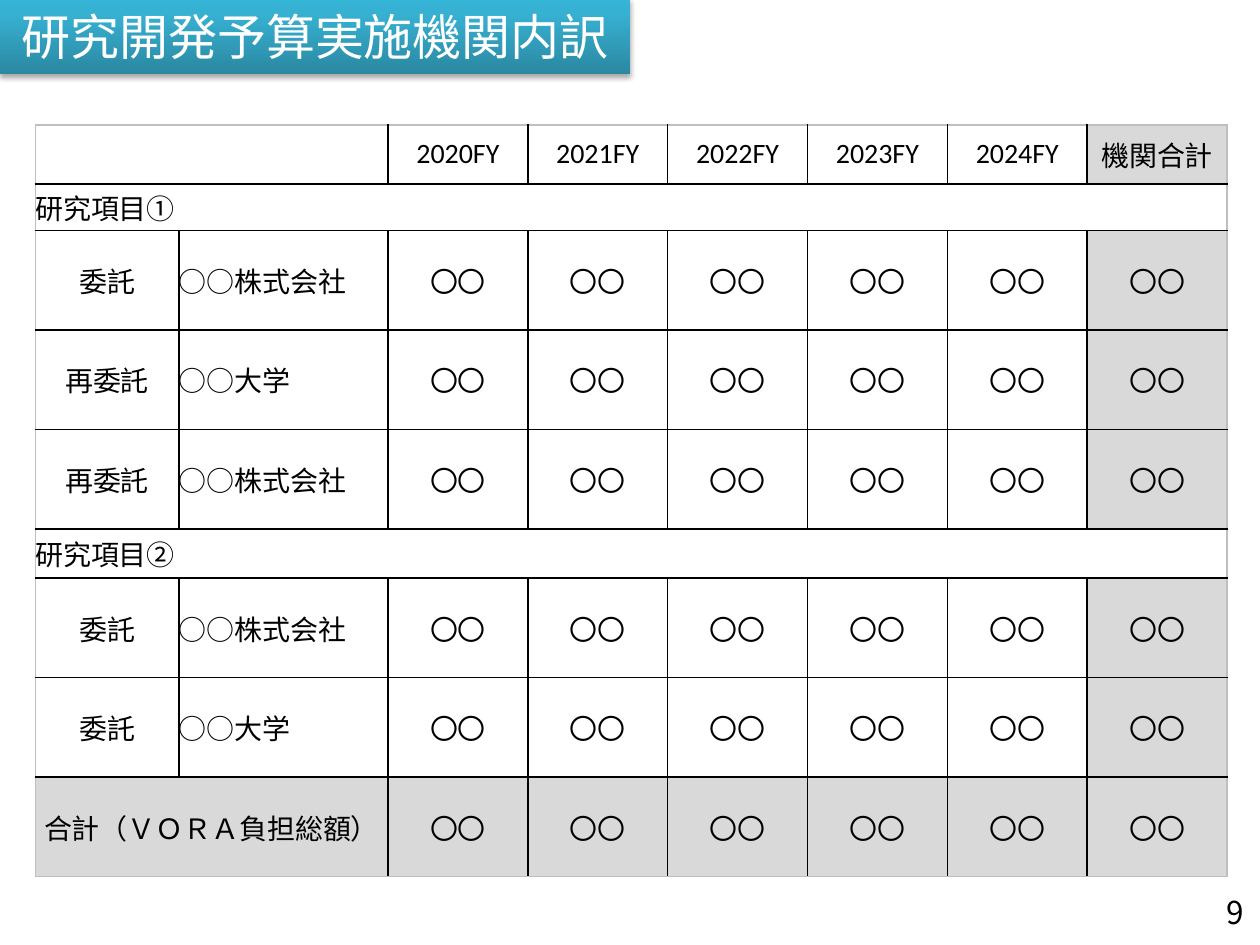
from lxml.etree import SubElement
from pptx import Presentation
from pptx.dml.color import RGBColor
from pptx.enum.text import MSO_ANCHOR, MSO_AUTO_SIZE, PP_ALIGN
from pptx.oxml import parse_xml
from pptx.oxml.ns import nsdecls, qn
from pptx.util import Inches, Pt

BLACK = RGBColor(0x00, 0x00, 0x00)
WHITE = RGBColor(0xFF, 0xFF, 0xFF)
GRAY = RGBColor(0xD9, 0xD9, 0xD9)
EDGE = RGBColor(0xBF, 0xBF, 0xBF)
STOPS = [
    (0, RGBColor(0x2A, 0x88, 0xA2)),
    (80, RGBColor(0x37, 0xB1, 0xD2)),
    (100, RGBColor(0x34, 0xB4, 0xD6)),
]
LATIN, CJK = "Calibri", "Noto Sans CJK JP"

TITLE = "研究開発予算実施機関内訳"
PAGE = "9"
YEARS = [f"{year}FY" for year in range(2020, 2025)]
SUMS = ["〇〇"] * 6
FIRM, SCHOOL = "○○株式会社", "○○大学"
ROWS = [
    ["", None, *YEARS, "機関合計"],
    ["研究項目①"] + [None] * 7,
    ["委託", FIRM, *SUMS],
    ["再委託", SCHOOL, *SUMS],
    ["再委託", FIRM, *SUMS],
    ["研究項目②"] + [None] * 7,
    ["委託", FIRM, *SUMS],
    ["委託", SCHOOL, *SUMS],
    ["合計（ＶＯＲＡ負担総額）", None, *SUMS],
]
WIDTHS = [1.14, 1.66] + [1.11] * 6
HEIGHTS = [0.47, 0.37, 0.79, 0.79, 0.79, 0.39, 0.79, 0.79, 0.79]


def write(frame, text, size=16, font=CJK, color=BLACK, align=PP_ALIGN.CENTER):
    para = frame.paragraphs[0]
    para.alignment = align
    run = para.add_run()
    run.text = text
    run.font.size = Pt(size)
    run.font.name = font
    run.font.color.rgb = color
    SubElement(run.font._element, qn("a:ea"), typeface=CJK)


def place(shape, left, top, width, height):
    shape.left, shape.top = Inches(left), Inches(top)
    shape.width, shape.height = Inches(width), Inches(height)


def add_title(slide):
    title = slide.shapes.title
    place(title, 0, -0.02, 5, 0.61)
    stops = "".join(
        f'<a:gs pos="{pos * 1000}"><a:srgbClr val="{color}"/></a:gs>'
        for pos, color in STOPS
    )
    props = title._element.spPr
    props.append(parse_xml(
        f'<a:gradFill {nsdecls("a")} rotWithShape="1"><a:gsLst>{stops}</a:gsLst>'
        '<a:lin ang="16200000" scaled="0"/></a:gradFill>'
    ))
    props.append(parse_xml(
        f'<a:effectLst {nsdecls("a")}><a:outerShdw blurRad="{Pt(3.1)}" '
        f'dist="{Pt(1.8)}" dir="5400000" rotWithShape="0"><a:srgbClr val="{BLACK}">'
        '<a:alpha val="35000"/></a:srgbClr></a:outerShdw></a:effectLst>'
    ))
    frame = title.text_frame
    frame.auto_size = MSO_AUTO_SIZE.NONE
    frame.vertical_anchor = MSO_ANCHOR.MIDDLE
    write(frame, TITLE, size=28, font=LATIN, color=WHITE)


def add_page(slide):
    box = slide.shapes.add_textbox(
        Inches(9.29), Inches(7.11), Inches(0.58), Inches(0.25))
    frame = box.text_frame
    frame.margin_left = frame.margin_right = 0
    frame.margin_top = frame.margin_bottom = 0
    frame.word_wrap = False
    frame.vertical_anchor = MSO_ANCHOR.MIDDLE
    write(frame, PAGE, size=18, align=PP_ALIGN.RIGHT)


def set_lines(cell, lines):
    props = cell._tc.get_or_add_tcPr()
    for spot, (side, color) in enumerate(lines):
        props.insert(spot, parse_xml(
            f'<a:ln{side} {nsdecls("a")} w="{Pt(1)}"><a:solidFill>'
            f'<a:srgbClr val="{color}"/></a:solidFill></a:ln{side}>'
        ))


def add_budget(slide):
    count, last = len(ROWS), len(WIDTHS) - 1
    table = slide.shapes.add_table(
        count, len(WIDTHS), Inches(0.28), Inches(0.99),
        Inches(sum(WIDTHS)), Inches(sum(HEIGHTS))).table
    table.first_row = table.horz_banding = False
    for column, width in zip(table.columns, WIDTHS):
        column.width = Inches(width)
    for line, height in zip(table.rows, HEIGHTS):
        line.height = Inches(height)
    for row, texts in enumerate(ROWS):
        end = texts.count(None)
        if end:
            table.cell(row, 0).merge(table.cell(row, end))
        whole = end == last
        for col, text in enumerate(texts):
            cell = table.cell(row, col)
            cell.margin_left = cell.margin_right = 0
            cell.margin_top = cell.margin_bottom = 0
            cell.vertical_anchor = MSO_ANCHOR.MIDDLE
            shade = row == count - 1 or (col == last and not whole)
            cell.fill.solid()
            cell.fill.fore_color.rgb = GRAY if shade else WHITE
            lines = [("T", BLACK if row else EDGE),
                     ("B", EDGE if row == count - 1 else BLACK)]
            if text is not None:
                edge = whole or col == last
                lines = [("L", BLACK if col else EDGE),
                         ("R", EDGE if edge else BLACK)] + lines
            set_lines(cell, lines)
            if text:
                left = whole or text in (FIRM, SCHOOL)
                write(cell.text_frame, text,
                      font=LATIN if text in YEARS else CJK,
                      align=PP_ALIGN.LEFT if left else PP_ALIGN.CENTER)


def main():
    deck = Presentation()
    deck.slide_width, deck.slide_height = Inches(10), Inches(7.5)
    slide = deck.slides.add_slide(deck.slide_layouts[5])
    add_title(slide)
    add_page(slide)
    add_budget(slide)
    deck.save("out.pptx")


if __name__ == "__main__":
    main()
